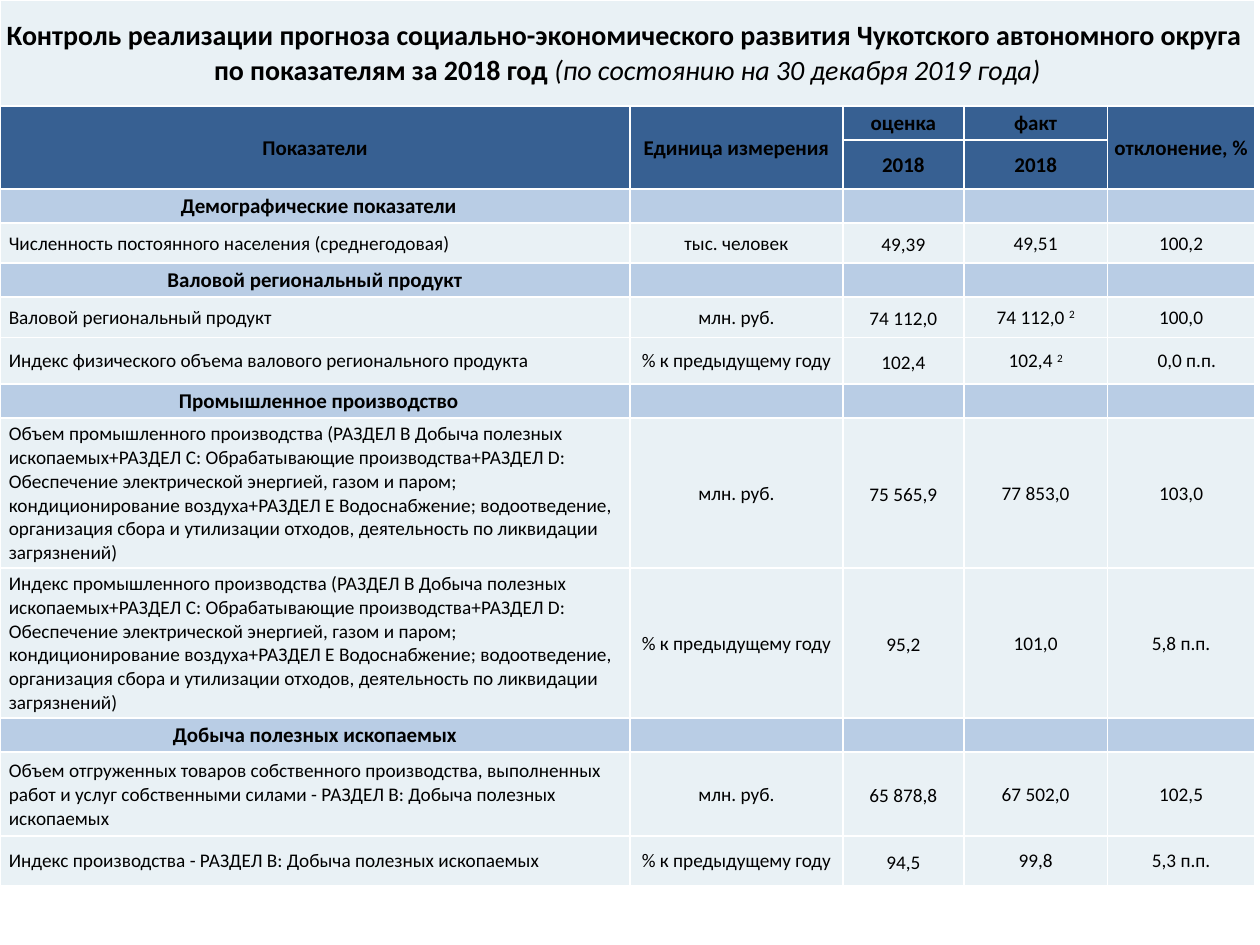
from dataclasses import dataclass

from lxml.etree import SubElement, fromstring
from pptx import Presentation
from pptx.dml.color import RGBColor
from pptx.enum.text import MSO_ANCHOR as Anchor, PP_ALIGN as Align
from pptx.oxml.ns import nsdecls, qn
from pptx.table import Table, _Cell as Cell
from pptx.util import Inches, Pt

COLORS = {
    "text": "000000",
    "border": "FFFFFF",
    "header": "376092",
    "section": "B9CDE5",
    "body": "E9F1F5",
}
FONT = "Calibri"
COLUMN_WIDTHS = (5, 1.69, 0.96, 1.14, 1.17)
TITLE_HEIGHT, HEADER_HEIGHTS, SECTION_HEIGHT = 0.84, (0.27, 0.39), 0.27
INSET, WIDE_INSET = 0.01, 0.07


@dataclass
class Section:
    name: str
    indent: float = INSET
    height: float = SECTION_HEIGHT


@dataclass
class Indicator:
    name: str
    unit: str
    estimate: str
    actual: str
    deviation: str
    height: float
    footnote: str = ""
    deviation_indent: float = INSET


THOUSANDS, MILLIONS, PERCENT = "тыс. человек", "млн. руб.", "% к предыдущему году"
INDUSTRY = (
    "промышленного производства (РАЗДЕЛ B Добыча полезных ископаемых+РАЗДЕЛ C: "
    "Обрабатывающие производства+РАЗДЕЛ D: Обеспечение электрической энергией, "
    "газом и паром; кондиционирование воздуха+РАЗДЕЛ E Водоснабжение; "
    "водоотведение, организация сбора и утилизации отходов, деятельность по "
    "ликвидации загрязнений)"
)
LINES = (
    Section("Демографические показатели", indent=WIDE_INSET),
    Indicator("Численность постоянного населения (среднегодовая)",
              THOUSANDS, "49,39", "49,51", "100,2", 0.32),
    Section("Валовой региональный продукт"),
    Indicator("Валовой региональный продукт",
              MILLIONS, "74 112,0", "74 112,0 ", "100,0", 0.32, footnote="2"),
    Indicator("Индекс физического объема валового регионального продукта",
              PERCENT, "102,4", "102,4 ", "0,0 п.п.", 0.37, footnote="2",
              deviation_indent=0.1),
    Section("Промышленное производство", indent=WIDE_INSET),
    Indicator(f"Объем {INDUSTRY}", MILLIONS, "75 565,9", "77 853,0", "103,0", 1.19),
    Indicator(f"Индекс {INDUSTRY}", PERCENT, "95,2", "101,0", "5,8 п.п.", 1.19),
    Section("Добыча полезных ископаемых"),
    Indicator("Объем отгруженных товаров собственного производства, выполненных "
              "работ и услуг собственными силами - РАЗДЕЛ B: Добыча полезных "
              "ископаемых", MILLIONS, "65 878,8", "67 502,0", "102,5", 0.67),
    Indicator("Индекс производства - РАЗДЕЛ B: Добыча полезных ископаемых",
              PERCENT, "94,5", "99,8", "5,3 п.п.", 0.39),
)
# The first indicator row is taller than its text needs by the same rule as others
ROW_HEIGHTS = (TITLE_HEIGHT, *HEADER_HEIGHTS, *(line.height for line in LINES))


def add_text(paragraph, text: str, *, size: float = 11, bold: bool = False,
             italic: bool = False, superscript: bool = False) -> None:
    run = paragraph.add_run()
    run.text = text
    font = run.font
    font.name, font.size, font.bold, font.italic = FONT, Pt(size), bold, italic
    font.color.rgb = RGBColor.from_string(COLORS["text"])
    if superscript:
        run._r.get_or_add_rPr().set("baseline", "30000")


def style_cell(cell: Cell, color: str) -> None:
    """Give a cell its fill, white borders, insets and a small empty paragraph."""
    cell.fill.solid()
    cell.fill.fore_color.rgb = RGBColor.from_string(COLORS[color])
    cell.vertical_anchor = Anchor.MIDDLE
    cell.margin_left = cell.margin_right = cell.margin_top = Inches(INSET)
    cell.margin_bottom = 0
    properties = cell._tc.get_or_add_tcPr()
    for position, side in enumerate("LRTB"):
        properties.insert(position, fromstring(
            f'<a:ln{side} {nsdecls("a")} w="12700"><a:solidFill>'
            f'<a:srgbClr val="{COLORS["border"]}"/></a:solidFill></a:ln{side}>'))
    paragraph = cell.text_frame.paragraphs[0]
    SubElement(paragraph._p, qn("a:endParaRPr")).set("sz", "1100")


def fill_cell(cell: Cell, text: str, *, align: Align = Align.CENTER,
              indent: float = INSET, **text_format):
    cell.margin_left = Inches(indent)
    paragraph = cell.text_frame.paragraphs[0]
    paragraph.alignment = align
    add_text(paragraph, text, **text_format)
    return paragraph


def draw_title(table: Table) -> None:
    title = table.cell(0, 0)
    title.merge(table.cell(0, len(COLUMN_WIDTHS) - 1))
    paragraph = fill_cell(
        title, "Контроль реализации прогноза социально-экономического развития "
        "Чукотского автономного округа ", size=16, bold=True)
    paragraph.add_line_break()
    add_text(paragraph, "по показателям за 2018 год ", size=16, bold=True)
    add_text(paragraph, "(по состоянию на 30 декабря 2019 года)", size=16, italic=True)


def draw_header(table: Table) -> None:
    headings = ("Показатели", "Единица измерения", "оценка", "факт", "отклонение, %")
    for column, heading in enumerate(headings):
        cell = table.cell(1, column)
        fill_cell(cell, heading, size=12, bold=True)
        if heading in ("оценка", "факт"):
            fill_cell(table.cell(2, column), "2018", size=12, bold=True)
        else:
            cell.merge(table.cell(2, column))


def draw_indicator(table: Table, row: int, line: Indicator) -> None:
    name, unit, estimate, actual, deviation = table.rows[row].cells
    fill_cell(name, line.name, align=Align.LEFT, indent=WIDE_INSET)
    fill_cell(unit, line.unit)
    estimate.margin_right = Inches(WIDE_INSET)
    estimate.margin_top = 0
    fill_cell(estimate, line.estimate, indent=WIDE_INSET).line_spacing = 1.15
    actual_value = fill_cell(actual, line.actual)
    if line.footnote:
        add_text(actual_value, line.footnote, superscript=True)
    fill_cell(deviation, line.deviation, indent=line.deviation_indent)


def main() -> None:
    deck = Presentation()
    deck.slide_width, deck.slide_height = Inches(10), Inches(7.5)
    slide = deck.slides.add_slide(deck.slide_layouts[6])
    table = slide.shapes.add_table(
        len(ROW_HEIGHTS), len(COLUMN_WIDTHS), 0, 0,
        Inches(sum(COLUMN_WIDTHS)), Inches(sum(ROW_HEIGHTS))).table
    table.first_row = table.horz_banding = False

    # Grid and fills
    for column, width in zip(table.columns, COLUMN_WIDTHS):
        column.width = Inches(width)
    row_colors = ["body", "header", "header"] + [
        "section" if isinstance(line, Section) else "body" for line in LINES]
    for row, height, color in zip(table.rows, ROW_HEIGHTS, row_colors):
        row.height = Inches(height)
        for cell in row.cells:
            style_cell(cell, color)

    # Contents
    draw_title(table)
    draw_header(table)
    for row, line in enumerate(LINES, start=1 + len(HEADER_HEIGHTS)):
        if isinstance(line, Section):
            fill_cell(table.cell(row, 0), line.name, indent=line.indent,
                      size=12, bold=True)
        else:
            draw_indicator(table, row, line)

    deck.save("out.pptx")


if __name__ == "__main__":
    main()
